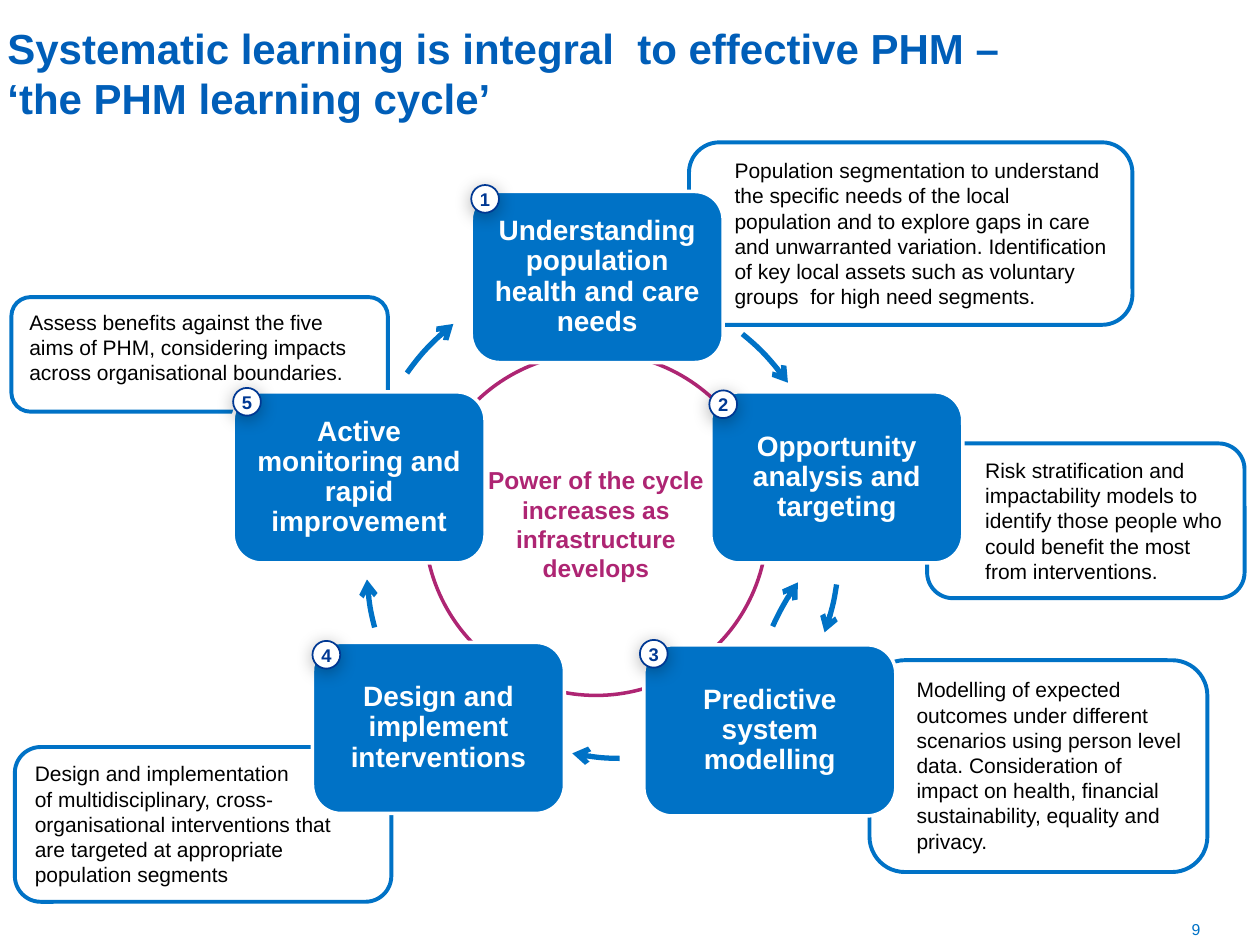
from lxml import etree
from pptx import Presentation
from pptx.dml.color import RGBColor
from pptx.enum.shapes import MSO_SHAPE
from pptx.enum.text import MSO_ANCHOR, PP_ALIGN
from pptx.oxml import parse_xml
from pptx.oxml.ns import nsdecls, qn
from pptx.util import Cm, Pt

ROUNDED, OVAL, ARC = MSO_SHAPE.ROUNDED_RECTANGLE, MSO_SHAPE.OVAL, MSO_SHAPE.ARC
TOP, MIDDLE, BOTTOM = MSO_ANCHOR.TOP, MSO_ANCHOR.MIDDLE, MSO_ANCHOR.BOTTOM
LEFT, CENTER, RIGHT = PP_ALIGN.LEFT, PP_ALIGN.CENTER, PP_ALIGN.RIGHT

BLUE, TITLE_BLUE, NAVY = "0072C6", "005EB8", "003893"
PINK, WHITE, BLACK = "AE2573", "FFFFFF", "000000"
STEP_WIDTH, STEP_HEIGHT, BADGE_SIZE = 5.08, 3.45, 0.56
ORBIT_SIZE = 10.11

NOTES = [
    ((17.53, 13.31, 6.81, 4.27), 0.74, 0.25,
     ["Modelling of expected outcomes under different scenarios using person "
      "level data. Consideration of impact on health, financial "
      "sustainability, equality and privacy."]),
    ((18.69, 8.94, 6.4, 3.12), 1.02, 0.25,
     ["Risk stratification and impactability models to identify those people "
      "who could benefit the most from interventions."]),
    ((0.23, 5.99, 7.59, 2.31), 0.25, 0.2,
     ["Assess benefits against the five aims of PHM, considering impacts "
      "across organisational boundaries."]),
    ((13.89, 2.87, 8.94, 3.68), 0.74, 0.25,
     ["Population segmentation to understand the specific needs of the local "
      "population and to explore gaps in care and unwarranted variation. "
      "Identification of key local assets such as voluntary groups  for high "
      "need segments."]),
    ((0.3, 15.06, 7.59, 3.12), 0.25, 0.99,
     ["Design and implementation",
      "of multidisciplinary, cross-organisational interventions that are "
      "targeted at appropriate population segments"]),
]

STEPS = [
    ((9.5, 3.86), (0, -0.13), "Understanding population health and care needs"),
    ((14.33, 7.9), (-0.03, -0.03), "Opportunity analysis and targeting"),
    ((12.98, 13), (-0.08, -0.1), "Predictive system modelling"),
    ((6.3, 12.95), (0, -0.03), "Design and implement interventions"),
    ((4.7, 7.9), (0, -0.08), "Active monitoring and rapid improvement"),
]

ARROWS = [
    ((6.71, 5.59), 309.3, 324.6),
    ((6.81, 5.99), 8.4, 19.7),
    ((7.49, 5.18), 90.6, 101.5),
    ((7.39, 6.32), 165.4, 176.5),
    ((7.26, 5.41), 215.6, 231.1),
    ((15.14, 9.63), 204, 215.6),
]


def color(value):
    return RGBColor.from_string(value)


def write(box, paragraphs, size, ink, bold=False, align=LEFT, anchor=TOP,
          margins=(0.25, 0.13, 0.25, 0.13), wrap=True, spacing=None):
    frame = box.text_frame
    left, top, right, bottom = map(Cm, margins)
    frame_format = {"word_wrap": wrap, "vertical_anchor": anchor,
                    "margin_left": left, "margin_top": top,
                    "margin_right": right, "margin_bottom": bottom}
    for name, value in frame_format.items():
        setattr(frame, name, value)
    for index, text in enumerate(paragraphs):
        para = frame.add_paragraph() if index else frame.paragraphs[0]
        para.alignment = align
        para.line_spacing = spacing
        span = para.add_run()
        span.text = text
        font_format = {"name": "Arial", "size": Pt(size), "bold": bold}
        for name, value in font_format.items():
            setattr(span.font, name, value)
        span.font.color.rgb = color(ink)


def add_box(page, kind, place, line, width, fill=None):
    box = page.shapes.add_shape(kind, *map(Cm, place))
    box.shadow.inherit = False
    if fill:
        box.fill.solid()
        box.fill.fore_color.rgb = color(fill)
    else:
        box.fill.background()
    box.line.color.rgb = color(line)
    box.line.width = Pt(width)
    return box


def add_label(page, place, text, size, ink, **layout):
    box = page.shapes.add_textbox(*map(Cm, place))
    write(box, [text], size, ink, **layout)


def add_note(page, place, left_margin, right_margin, paragraphs):
    box = add_box(page, ROUNDED, place, BLUE, 2.25)
    write(box, paragraphs, 12, BLACK,
          margins=(left_margin, 0.13, right_margin, 0.13))


def add_hub(page, place):
    box = add_box(page, OVAL, place, PINK, 2, WHITE)
    write(box, ["Power of the cycle increases as infrastructure develops"],
          14, PINK, bold=True, align=CENTER, anchor=MIDDLE)


def add_badge(page, place, number):
    badge = add_box(page, OVAL, place, NAVY, 1, WHITE)
    effects = badge._element.spPr.find(qn("a:effectLst"))
    effects.append(parse_xml(
        f'<a:outerShdw {nsdecls("a")} blurRad="{Pt(10)}" dist="{Pt(2)}" '
        'dir="5400000" algn="ctr" rotWithShape="0">'
        f'<a:srgbClr val="{BLACK}"><a:alpha val="30000"/></a:srgbClr>'
        '</a:outerShdw>'))
    write(badge, [str(number)], 10.5, NAVY, bold=True, align=CENTER,
          anchor=MIDDLE, margins=(0.13,) * 4, wrap=False)


def add_step(page, corner, badge_offset, number, text):
    left, top = corner
    box = add_box(page, ROUNDED, (left, top, STEP_WIDTH, STEP_HEIGHT),
                  WHITE, 2, BLUE)
    write(box, [text], 16, WHITE, bold=True, align=CENTER, anchor=MIDDLE,
          margins=(0.13,) * 4, spacing=0.9)
    across, down = badge_offset
    add_badge(page, (left + across, top + down, BADGE_SIZE, BADGE_SIZE), number)


def add_arrow(page, corner, start, end):
    arrow = add_box(page, ARC, (*corner, ORBIT_SIZE, ORBIT_SIZE), BLUE, 3)
    for index, degrees in enumerate((start, end)):
        arrow.adjustments[index] = degrees * 0.6
    line = arrow.line._get_or_add_ln()
    etree.SubElement(line, qn("a:tailEnd"), type="arrow")


def main():
    deck = Presentation()
    deck.slide_width, deck.slide_height = Cm(25.4), Cm(19.05)
    page = deck.slides.add_slide(deck.slide_layouts[6])
    add_label(page, (23.72, 18.54, 0.48, 0.36), "9", 9, BLUE, align=RIGHT,
              margins=(0,) * 4, wrap=False)
    for note in NOTES:
        add_note(page, *note)
    add_hub(page, (8.56, 7.11, 6.91, 6.91))
    for arrow in ARROWS:
        add_arrow(page, *arrow)
    for number, (corner, badge_offset, text) in enumerate(STEPS, 1):
        add_step(page, corner, badge_offset, number, text)
    add_label(page, (0.15, 0.3, 20.8, 2.31),
              "Systematic learning is integral  to effective PHM – "
              "‘the PHM learning cycle’", 24, TITLE_BLUE, bold=True,
              anchor=BOTTOM, margins=(0, 0.13, 0, 0.13))
    deck.save("out.pptx")


if __name__ == "__main__":
    main()
